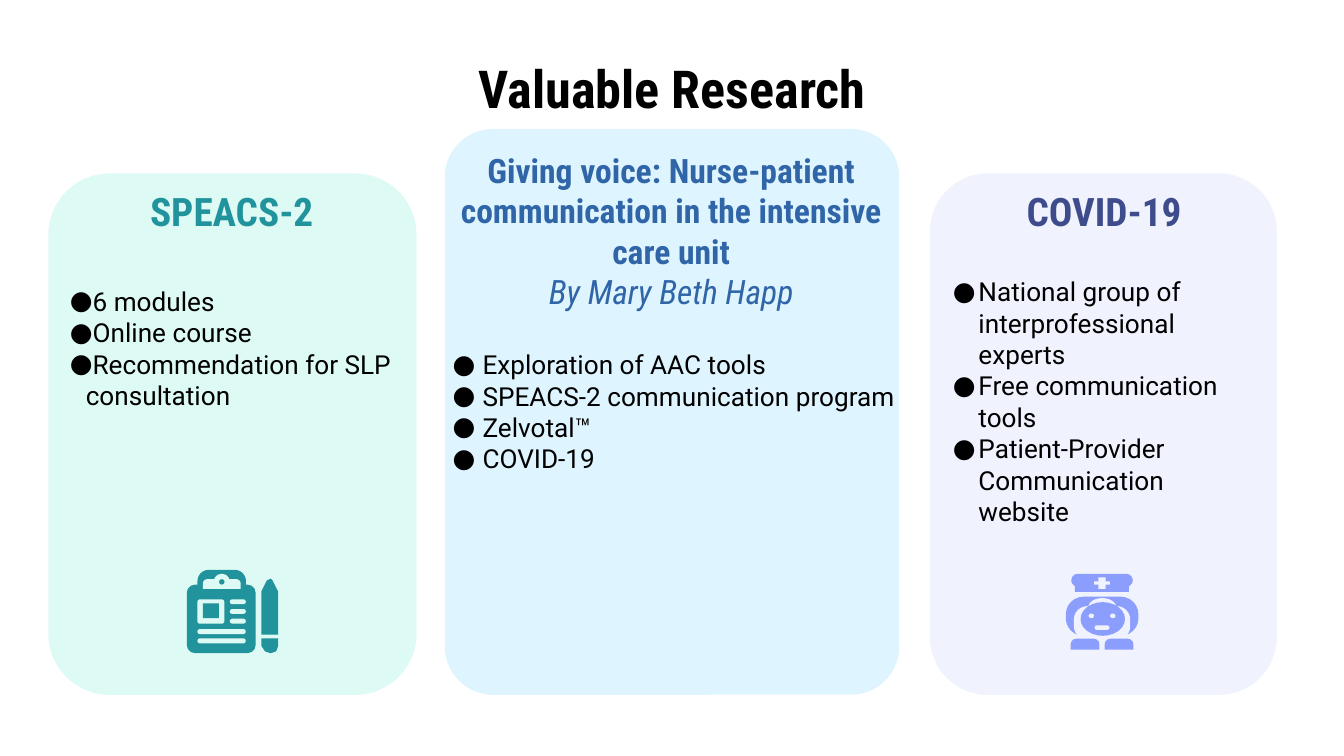
from lxml import etree
from pptx import Presentation
from pptx.dml.color import RGBColor
from pptx.enum.shapes import MSO_SHAPE
from pptx.enum.text import MSO_ANCHOR, MSO_AUTO_SIZE, PP_ALIGN
from pptx.oxml.ns import qn
from pptx.util import Pt

ROUND = MSO_SHAPE.ROUNDED_RECTANGLE
RECT = MSO_SHAPE.RECTANGLE
OVAL = MSO_SHAPE.OVAL
TOP = MSO_SHAPE.ROUND_2_SAME_RECTANGLE
CAP = MSO_SHAPE.FLOWCHART_MANUAL_OPERATION
CROSS = MSO_SHAPE.CROSS
MOON = MSO_SHAPE.CHORD
PEAK = MSO_SHAPE.PENTAGON
CENTER, LEFT = PP_ALIGN.CENTER, PP_ALIGN.LEFT
MID, HIGH = MSO_ANCHOR.MIDDLE, MSO_ANCHOR.TOP
FIXED = MSO_AUTO_SIZE.NONE

COLORS = {
    "black": "000000", "mint": "02DAAB", "sky": "01ADFA", "lilac": "8C9EFD",
    "teal": "21939C", "blue": "3065A8", "navy": "3F4C8C",
    "pale mint": "DEFAF4", "pale lilac": "F0F2FF",
}
HEAD, BODY = "Roboto Condensed", "Roboto"
TITLE = "Valuable Research"
TITLE_BOX = (36, 32.4, 648, 29.5)

CARDS = [
    {"panel": (25.9, 92.9, 197.3, 279.4), "tint": "mint", "round": 0.167,
     "head": [("SPEACS-2", True)], "size": 21, "color": "teal",
     "head_box": (51.8, 92.9, 144.7, 29.5), "head_at": HIGH, "head_top": 7.2,
     "items": ["6 modules", "Online course",
               "Recommendation for SLP consultation"],
     "list_box": (30.2, 145.4, 197.3, 82.1), "list_top": 7.2,
     "indent": (8.6, -11.5), "slot": 1},
    {"panel": (238.3, 69.1, 243.4, 303.1), "tint": "sky", "round": 0.106,
     "head": [("Giving voice: Nurse-patient communication in the "
               "intensive care unit", True), ("By Mary Beth Happ", False)],
     "size": 18, "color": "blue",
     "head_box": (231.8, 79.9, 255.6, 94.3), "head_at": MID, "head_top": 0,
     "items": ["Exploration of AAC tools", "SPEACS-2 communication program",
               "Zelvotal™", "COVID-19"],
     "list_box": (233.3, 186.5, 255.6, 74.9), "list_top": 0,
     "indent": (18, -16), "slot": 2},
    {"panel": (498.2, 92.9, 185.8, 279.4), "tint": "lilac", "round": 0.167,
     "head": [("COVID-19", True)], "size": 21, "color": "navy",
     "head_box": (519.1, 92.9, 144.7, 29.5), "head_at": HIGH, "head_top": 7.2,
     "items": ["National group of interprofessional experts",
               "Free communication tools",
               "Patient-Provider Communication website"],
     "list_box": (503.3, 139.7, 175.7, 150.5), "list_top": 7.2,
     "indent": (13.7, -16), "slot": 4},
]

BOARD = [
    (TOP, (105.8, 305.3, 26, 12), "teal", 0.5),
    (ROUND, (100.1, 313.2, 36.9, 36.7), "teal", 0.12),
    (TOP, (108.7, 310.3, 20.2, 5.2), "pale mint", 0.4),
    (OVAL, (114.5, 307.4, 8.6, 8), "pale mint", None),
    (OVAL, (117.4, 310.3, 2.9, 2.9), "teal", None),
    (ROUND, (105.8, 321.1, 14.4, 13), "pale mint", 0.1),
    (RECT, (108.7, 323.3, 8.6, 7.9), "teal", None),
]
BOARD += [(ROUND, (123.1, 321.1 + 5.2 * row, 8.6, 2.6), "pale mint", 0.5)
          for row in range(3)]
BOARD += [(ROUND, (105.8, 337 + 5 * row, 25.9, 2.7), "pale mint", 0.5)
          for row in range(2)]
NURSE = [
    (ROUND, (571, 319.7, 38.9, 20.9), "lilac", 0.45),
    (ROUND, (575.3, 324.7, 30.2, 18), "pale lilac", 0.4),
    (OVAL, (583, 320.4, 15, 10), "pale lilac", None),
    (OVAL, (578.9, 322.6, 23.8, 18), "lilac", None),
    (OVAL, (583.2, 328.7, 2.9, 2.5), "pale lilac", None),
    (OVAL, (594.7, 328.7, 2.9, 2.5), "pale lilac", None),
    (ROUND, (586.4, 335, 8, 2.4), "pale lilac", 0.5),
    (TOP, (573.6, 342.2, 15.4, 5.8), "lilac", 0.5),
    (TOP, (591.8, 342.2, 15.4, 5.8), "lilac", 0.5),
    (ROUND, (573.9, 307.4, 33, 7), "lilac", 0.5),
    (RECT, (575.8, 310, 29, 7.2), "lilac", None),
    (CROSS, (586.2, 309.3, 8.3, 6.2), "pale lilac", 0.36),
]
PENCIL = [
    [(144.7, 310.2), (146, 311), (149, 316.8), (149, 339.8),
     (140.4, 339.8), (140.4, 316.8), (143.4, 311)],
    [(140.4, 342), (149, 342), (149, 346.3), (147.8, 348.8), (144.7, 349.9),
     (141.6, 348.8), (140.4, 346.3)],
]


def rgb(name):
    return RGBColor.from_string(COLORS[name])


def apply(obj, values):
    for key, value in values.items():
        setattr(obj, key, value)


def place(shape, box):
    apply(shape, dict(zip(("left", "top", "width", "height"), map(Pt, box))))


def paint(shape, color):
    shape.shadow.inherit = False
    shape.fill.solid()
    shape.fill.fore_color.rgb = rgb(color)
    shape.line.fill.background()


def draw(shapes, kind, box, color, bend):
    shape = shapes.add_shape(kind, *map(Pt, box))
    paint(shape, color)
    if bend is not None:
        shape.adjustments[0] = bend
    return shape


def write(shape, lines, box, anchor, inset, align, font, color):
    place(shape, box)
    frame = shape.text_frame
    apply(frame, {"word_wrap": True, "auto_size": FIXED,
                  "vertical_anchor": anchor, "margin_left": Pt(7.2),
                  "margin_right": Pt(7.2), "margin_top": Pt(inset),
                  "margin_bottom": Pt(7.2)})
    frame.text = "\n".join(text for text, _ in lines)
    for para, (_, look) in zip(frame.paragraphs, lines):
        apply(para, {"alignment": align, "space_before": Pt(0),
                     "space_after": Pt(0), "line_spacing": 1.0})
        run = para.runs[0].font
        apply(run, {**font, **look})
        run.color.rgb = rgb(color)


def bullet(para, indent):
    props = para._p.get_or_add_pPr()
    for key, value in zip(("marL", "indent"), indent):
        props.set(key, str(int(Pt(value))))
    tint = etree.SubElement(props, qn("a:buClr"))
    etree.SubElement(tint, qn("a:srgbClr"), val=COLORS["black"])
    etree.SubElement(props, qn("a:buFont"), typeface=BODY)
    etree.SubElement(props, qn("a:buChar"), char="●")


def card(slide, data, depth):
    shapes = slide.shapes
    panel = draw(shapes, ROUND, data["panel"], data["tint"], data["round"])
    tone = panel._element.spPr.find(".//" + qn("a:srgbClr"))
    etree.SubElement(tone, qn("a:alpha"), val="13000")
    shapes._spTree.insert(depth, panel._element)

    head = shapes.add_textbox(0, 0, 0, 0)
    lines = [(text, {"bold": bold, "italic": not bold})
             for text, bold in data["head"]]
    write(head, lines, data["head_box"], data["head_at"], data["head_top"],
          CENTER, {"name": HEAD, "size": Pt(data["size"])}, data["color"])

    body = slide.placeholders[data["slot"]]
    write(body, [(text, {}) for text in data["items"]], data["list_box"], MID,
          data["list_top"], LEFT,
          {"name": BODY, "size": Pt(14), "bold": False}, "black")
    for para in body.text_frame.paragraphs:
        bullet(para, data["indent"])


def main():
    deck = Presentation()
    apply(deck, {"slide_width": Pt(720), "slide_height": Pt(405)})
    slide = deck.slides.add_slide(deck.slide_layouts[4])
    shapes = slide.shapes
    write(shapes.title, [(TITLE, {})], TITLE_BOX, MID, 7.2, CENTER,
          {"name": HEAD, "size": Pt(28), "bold": True}, "black")
    for depth, data in enumerate(CARDS, 2):
        card(slide, data, depth)
    spare = slide.placeholders[3]._element
    spare.getparent().remove(spare)

    for icon in (BOARD, NURSE):
        group = shapes.add_group_shape()
        for part in icon:
            draw(group.shapes, *part)
    for points in PENCIL:
        pen = shapes.build_freeform(*points[0], scale=Pt(1))
        pen.add_line_segments(points[1:], close=True)
        paint(pen.convert_to_shape(), "teal")
    deck.save("out.pptx")


if __name__ == "__main__":
    main()
